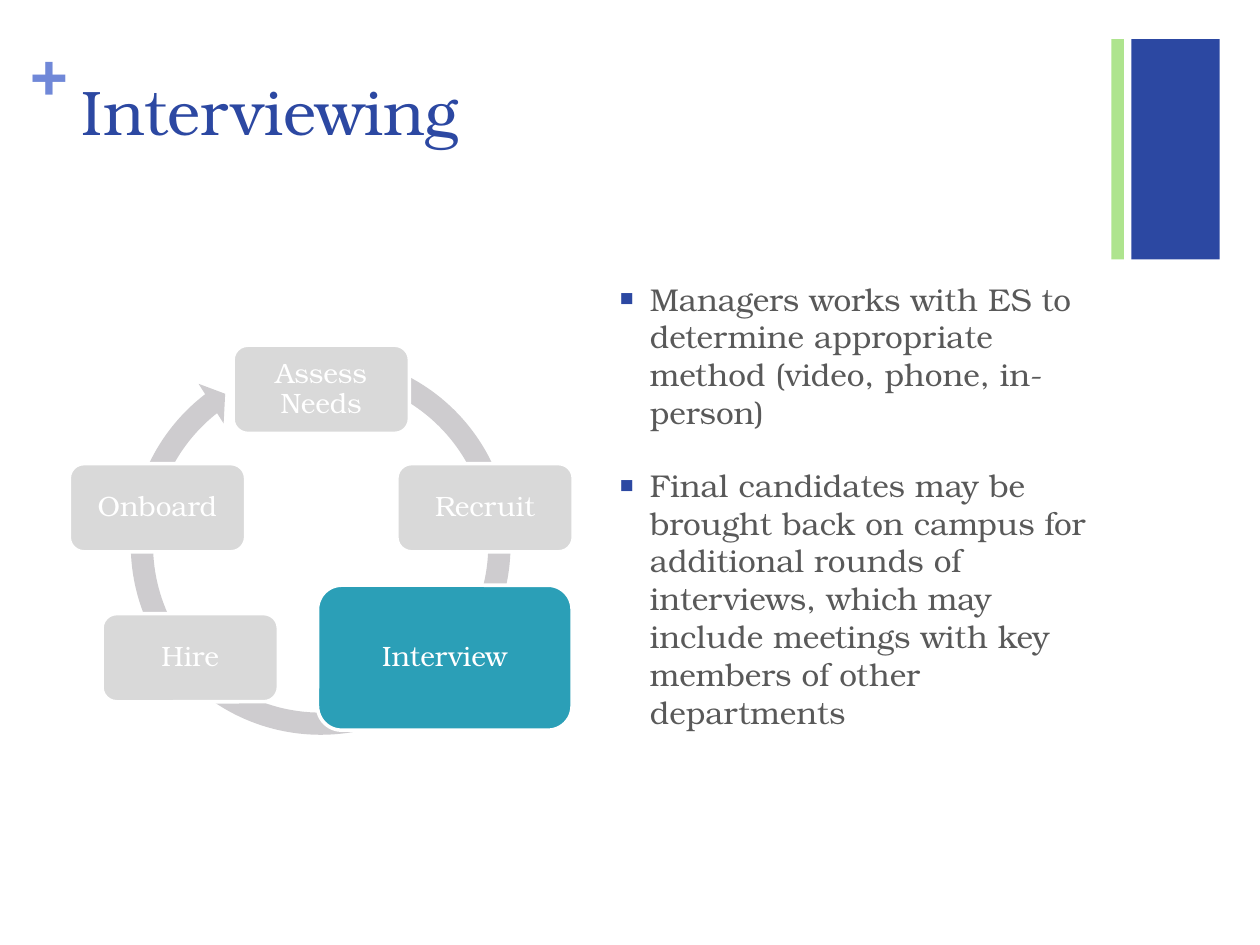
from lxml.etree import SubElement
from pptx import Presentation
from pptx.dml.color import RGBColor
from pptx.enum.shapes import MSO_SHAPE
from pptx.enum.text import MSO_ANCHOR, PP_ALIGN
from pptx.oxml.ns import qn
from pptx.util import Inches, Pt

NAVY = RGBColor(0x2C, 0x48, 0xA2)
GREEN = RGBColor(0xAE, 0xE4, 0x8E)
PERIWINKLE = RGBColor(0x70, 0x88, 0xD8)
TEAL = RGBColor(0x2B, 0x9F, 0xB7)
RING_GRAY = RGBColor(0xCE, 0xCC, 0xCF)
STEP_GRAY = RGBColor(0xD9, 0xD9, 0xD9)
TEXT_GRAY = RGBColor(0x59, 0x59, 0x59)
WHITE = RGBColor(0xFF, 0xFF, 0xFF)


class Deck:
    """Style and current slide; lengths are columns and rows of a 100 x 75 grid."""
    font = "TeX Gyre Bonum"
    cols, rows = 100, 75

    def __init__(self):
        self.prs = Presentation()
        self.prs.slide_width, self.prs.slide_height = Inches(10), Inches(7.5)
        self.s = self.prs.slides.add_slide(self.prs.slide_layouts[6])

    def box(self, x, y, w, h):
        col = self.prs.slide_width / self.cols
        row = self.prs.slide_height / self.rows
        return [round(n) for n in (x * col, y * row, w * col, h * row)]

    def style(self, p, size, color, bold=False):
        for r in p.runs:
            r.font.name, r.font.size, r.font.bold = self.font, Pt(size), bold
            r.font.color.rgb = color

    def shape(self, kind, at, fill):
        sp = self.s.shapes.add_shape(kind, *self.box(*at))
        sp.shadow.inherit = False
        sp.fill.solid()
        sp.fill.fore_color.rgb = fill
        sp.line.fill.background()
        return sp

    def text(self, text, at, size, color, bold=False, margins=True):
        tf = self.s.shapes.add_textbox(*self.box(*at)).text_frame
        tf.word_wrap = True
        if not margins:
            tf.margin_left = tf.margin_right = tf.margin_top = tf.margin_bottom = 0
        tf.text = text
        for p in tf.paragraphs:
            self.style(p, size, color, bold)
        return tf

    def bullets(self, items, at, size, color, bullet_color):
        tf = self.text("\n".join(items), at, size, color)
        for p in tf.paragraphs:
            p.space_before = Pt(20)
            pPr = p._p.get_or_add_pPr()
            pPr.set("marL", str(Inches(0.25)))
            pPr.set("indent", str(-Inches(0.25)))
            clr = SubElement(pPr, qn("a:buClr"))
            SubElement(clr, qn("a:srgbClr"), val=str(bullet_color))
            SubElement(pPr, qn("a:buSzPct"), val="75000")
            SubElement(pPr, qn("a:buFont"), typeface=self.font)
            SubElement(pPr, qn("a:buChar"), char="■")

    def ring(self, at, adjustments, fill):
        sp = self.shape(MSO_SHAPE.CIRCULAR_ARROW, at, fill)
        for i, value in enumerate(adjustments):
            sp.adjustments[i] = value

    def step(self, label, center, size, fill):
        (cx, cy), (w, h) = center, size
        sp = self.shape(MSO_SHAPE.ROUNDED_RECTANGLE, (cx - w / 2, cy - h / 2, w, h), fill)
        sp.line.color.rgb, sp.line.width = WHITE, Pt(2)
        tf = sp.text_frame
        tf.margin_left = tf.margin_right = tf.margin_top = tf.margin_bottom = Inches(0.07)
        tf.word_wrap, tf.vertical_anchor = True, MSO_ANCHOR.MIDDLE
        tf.text = label
        p = tf.paragraphs[0]
        p.alignment, p.line_spacing = PP_ALIGN.CENTER, 0.9
        self.style(p, 16, WHITE)


def main():
    deck = Deck()

    # Corner bars and plus sign
    deck.shape(MSO_SHAPE.RECTANGLE, (89.8, 3.1, 7, 17.5), NAVY)
    deck.shape(MSO_SHAPE.RECTANGLE, (88.2, 3.1, 1, 17.5), GREEN)
    deck.text("+", (2.4, 2.5, 2.9, 6.1), 36, PERIWINKLE, bold=True, margins=False)

    # Title and body
    deck.text("Interviewing", (5.5, 5.3, 82.6, 12.2), 36, NAVY)
    deck.bullets([
        "Managers works with ES to determine appropriate method (video, phone, in-person)",
        "Final candidates may be brought back on campus for additional rounds of "
        "interviews, which may include meetings with key members of other departments",
    ], (48.1, 21.7, 40, 45.3), 18, TEXT_GRAY, NAVY)

    # Hiring cycle: ring, then steps clockwise around its axis
    deck.ring((9.4, 27.2, 32.1, 32.1), (0.055, 3.307, 139.325, 172.914, 0.058), RING_GRAY)
    axis, small, large = 25.5, (14, 7), (20.2, 11.5)
    steps = [
        ("Assess Needs", 0, 30.9, small, STEP_GRAY),
        ("Recruit", 13, 40.3, small, STEP_GRAY),
        ("Interview", 9.8, 52.2, large, TEAL),
        ("Hire", -10.4, 52.2, small, STEP_GRAY),
        ("Onboard", -13, 40.3, small, STEP_GRAY),
    ]
    for label, dx, cy, size, fill in steps:
        deck.step(label, (axis + dx, cy), size, fill)

    deck.prs.save("out.pptx")


if __name__ == "__main__":
    main()
